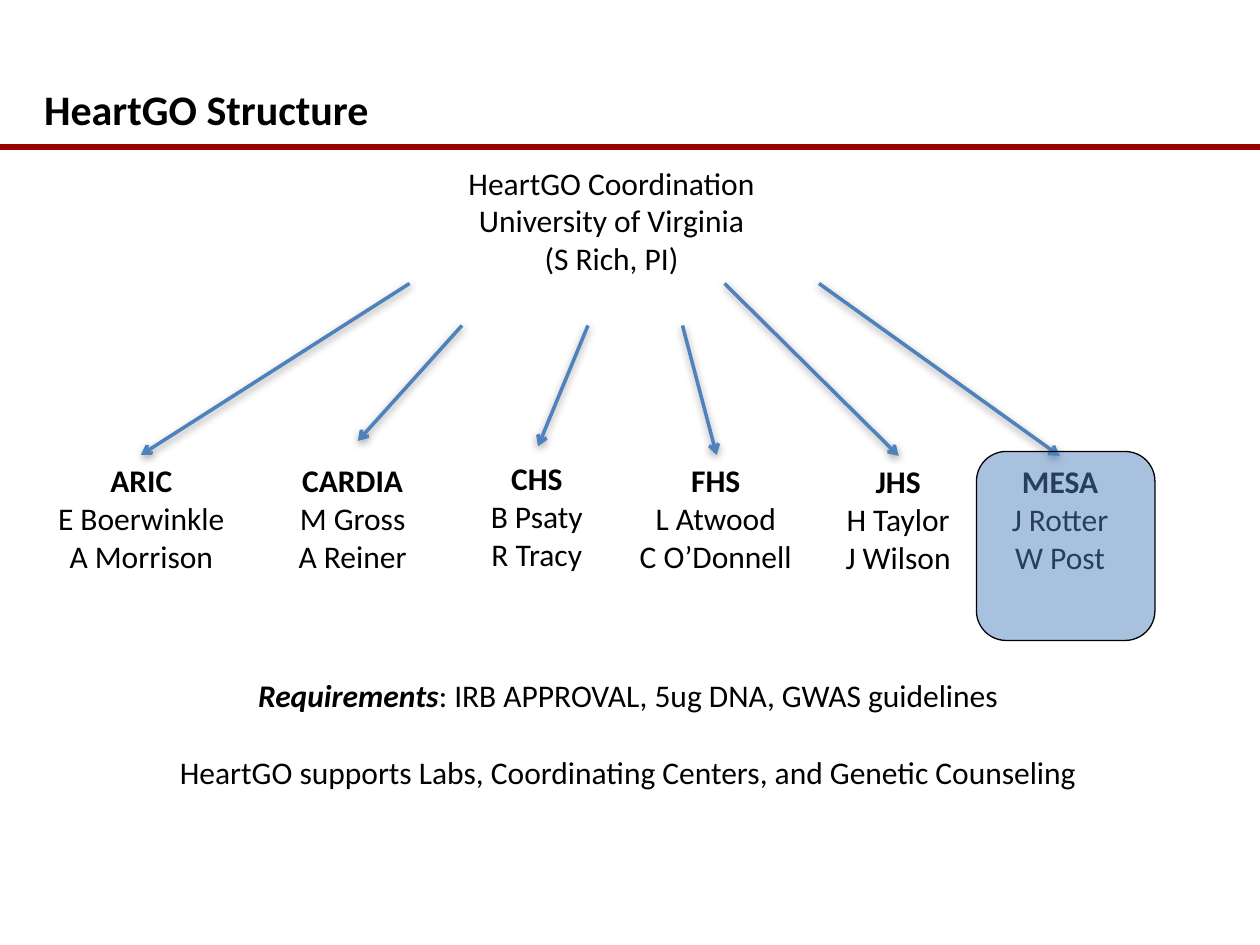
from lxml import etree
from pptx import Presentation
from pptx import util as u
from pptx.dml.color import RGBColor
from pptx.enum import shapes, text
from pptx.oxml import ns

COLORS = {"ink": "000000", "rule": "990000", "blue": "4F81BD"}
ALIGN = text.PP_ALIGN
STUDIES = [
    # study and investigators, box (left, top, width), arrow (x1, y1, x2, y2)
    (("ARIC", "E Boerwinkle", "A Morrison"), (9.5, 260, 142.5), (234, 162, 80.5, 260)),
    (("CARDIA", "M Gross", "A Reiner"), (152.5, 260, 98), (264, 186, 204.5, 252)),
    (("CHS", "B Psaty", "R Tracy"), (263.5, 259, 86.5), (336, 186, 307.5, 255)),
    (("FHS", "L Atwood", "C O’Donnell"), (343.5, 260, 131), (390, 186, 409.5, 260)),
    (("JHS", "H Taylor", "J Wilson"), (465, 260.5, 96.5), (414, 162, 513.5, 260.5)),
    (("MESA", "J Rotter", "W Post"), (561, 260.5, 89.5), (468, 162, 605.5, 260.5)),
]


def color(name):
    """Return the named palette colour."""
    return RGBColor.from_string(COLORS[name])


def points(*values):
    """Convert numbers to lengths in points."""
    return [u.Pt(value) for value in values]


def add_run(paragraph, words, size=18, bold=False, italic=False):
    """Append formatted text to a paragraph."""
    run = paragraph.add_run()
    run.text = words
    font = run.font
    font.name, font.size, font.bold, font.italic = "Calibri", u.Pt(size), bold, italic
    font.color.rgb = color("ink")


def add_text_box(slide, lines, left, top, width, bold_first=False):
    """Add a centred text box with one paragraph per line."""
    frame = slide.shapes.add_textbox(*points(left, top, width, 94.5)).text_frame
    frame.word_wrap = True
    for index, line in enumerate(lines):
        paragraph = frame.add_paragraph() if index else frame.paragraphs[0]
        paragraph.alignment = ALIGN.CENTER
        add_run(paragraph, line, bold=bold_first and index == 0)
    return frame


def add_line(slide, ends, line_color, width):
    """Add a straight line without a shadow."""
    line = slide.shapes.add_connector(shapes.MSO_CONNECTOR.STRAIGHT, *points(*ends))
    line.line.color.rgb = color(line_color)
    line.line.width = u.Pt(width)
    etree.SubElement(line._element.spPr, ns.qn("a:effectLst"))
    return line


def add_arrow(slide, ends):
    """Add a blue arrow with a soft shadow below it."""
    arrow = add_line(slide, ends, "blue", 2)
    etree.SubElement(arrow.line._get_or_add_ln(), ns.qn("a:tailEnd"), type="arrow")
    effects = arrow._element.spPr.find(ns.qn("a:effectLst"))
    shadow = etree.SubElement(effects, ns.qn("a:outerShdw"), blurRad=str(u.Pt(5)),
                              dist=str(u.Pt(1.6)), dir="5400000", rotWithShape="0")
    shade = etree.SubElement(shadow, ns.qn("a:srgbClr"), val=COLORS["ink"])
    etree.SubElement(shade, ns.qn("a:alpha"), val="38000")


def add_highlight(slide, left, top, width, height):
    """Add a translucent rounded rectangle."""
    shape = slide.shapes.add_shape(shapes.MSO_SHAPE.ROUNDED_RECTANGLE,
                                   *points(left, top, width, height))
    shape.shadow.inherit = False
    shape.fill.solid()
    shape.fill.fore_color.rgb = color("blue")
    fill = shape._element.spPr.find(ns.qn("a:solidFill"))
    etree.SubElement(fill[0], ns.qn("a:alpha"), val="49000")
    shape.line.color.rgb = color("ink")
    shape.line.width = u.Pt(0.75)


def set_title(slide, words):
    """Place and format the slide title."""
    title = slide.shapes.title
    title.left, title.top, title.width, title.height = points(18, 34, 376, 56)
    title.text_frame.vertical_anchor = text.MSO_ANCHOR.MIDDLE
    paragraph = title.text_frame.paragraphs[0]
    paragraph.alignment = ALIGN.LEFT
    add_run(paragraph, words, size=24, bold=True)


def add_requirements(slide):
    """Add the requirements and the support statement."""
    frame = add_text_box(slide, [], 6, 383, 706)
    requirements, support = frame.paragraphs[0], frame.add_paragraph()
    requirements.alignment = support.alignment = ALIGN.CENTER
    add_run(requirements, "Requirements", bold=True, italic=True)
    add_run(requirements, ": IRB APPROVAL, 5ug DNA, GWAS guidelines")
    support.space_before = u.Pt(22)
    add_run(support, "HeartGO supports Labs, Coordinating Centers, and Genetic Counseling")


def main():
    """Build the slide and save it."""
    presentation = Presentation()
    presentation.slide_width, presentation.slide_height = points(720, 540)
    slide = presentation.slides.add_slide(presentation.slide_layouts[5])
    add_line(slide, (0, 84, 720, 84), "rule", 3)
    set_title(slide, "HeartGO Structure")
    add_text_box(slide, ("HeartGO Coordination", "University of Virginia", "(S Rich, PI)"),
                 232, 90, 235)
    for lines, box, ends in STUDIES:
        add_arrow(slide, ends)
        add_text_box(slide, lines, *box, bold_first=True)
    add_requirements(slide)
    add_highlight(slide, 558, 258, 102, 108)
    presentation.save("out.pptx")


if __name__ == "__main__":
    main()
